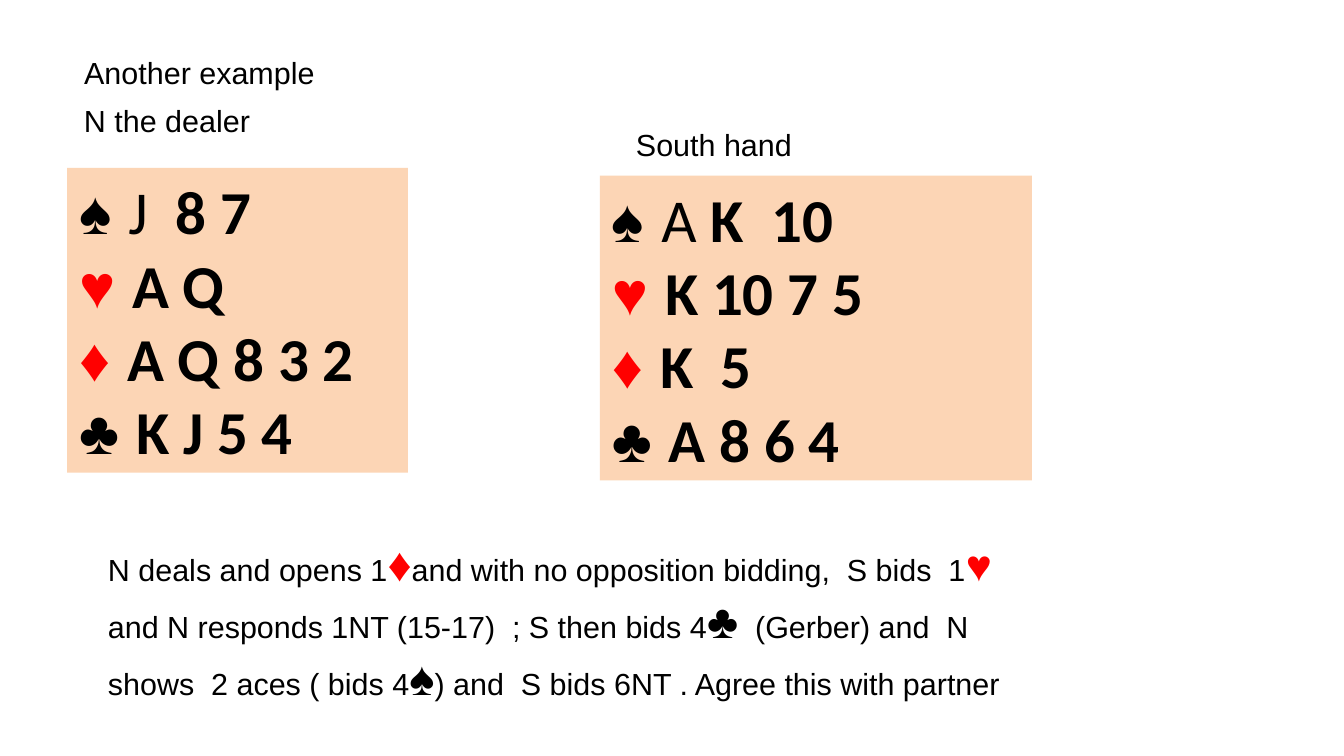
from dataclasses import dataclass

from pptx import Presentation
from pptx.dml.color import RGBColor
from pptx.enum.shapes import MSO_SHAPE
from pptx.enum.text import MSO_ANCHOR, MSO_AUTO_SIZE, PP_ALIGN
from pptx.util import Cm, Pt


@dataclass(frozen=True)
class Theme:
    black: RGBColor = RGBColor(0, 0, 0)
    red: RGBColor = RGBColor(255, 0, 0)
    panel: RGBColor = RGBColor(0xFC, 0xD5, 0xB5)
    text_font: str = "Arial"
    card_font: str = "Calibri"
    text_size: Pt = Pt(18)
    card_size: Pt = Pt(36)
    suit_size: Pt = Pt(28)
    heart_size: Pt = Pt(26)


THEME = Theme()
RED_SUITS = "♥♦"

NORTH_HAND = [
    [("♠ ", False), ("J", False), ("  8 7", True)],
    [("♥ ", True), ("A Q", True)],
    [("♦ ", True), ("A Q 8 3 2", True)],
    [("♣ ", True), ("K J 5 4", True)],
]
SOUTH_HAND = [
    [("♠ ", False), ("A", False), (" K  10", True)],
    [("♥ ", True), ("K 10 7 5", True)],
    [("♦ ", True), ("K  5", True)],
    [("♣ ", True), ("A 8 6 4", True)],
]
BIDDING = [
    "N deals and opens 1", "♦",
    "and with no opposition bidding,  S bids  1", "♥",
    " and N responds 1NT (15-17)  ; S then bids 4", "♣",
    "  (Gerber) and  N shows  2 aces ( bids 4", "♠",
    ") and  S bids 6NT . Agree this with partner",
]


def suit_color(suit):
    return THEME.red if suit in RED_SUITS else THEME.black


def format_text(paragraph):
    paragraph.alignment = PP_ALIGN.LEFT
    paragraph.font.name = THEME.text_font
    paragraph.font.size = THEME.text_size
    paragraph.font.color.rgb = THEME.black


def place_title(slide, text, left, top, width, height):
    title = slide.shapes.title
    title.left, title.top, title.width, title.height = left, top, width, height
    frame = title.text_frame
    frame.text = text
    frame.word_wrap = True
    frame.auto_size = MSO_AUTO_SIZE.NONE
    frame.vertical_anchor = MSO_ANCHOR.TOP
    format_text(frame.paragraphs[0])


def add_label(slide, text, left, top, width, height):
    frame = slide.shapes.add_textbox(left, top, width, height).text_frame
    frame.word_wrap = True
    frame.text = text
    format_text(frame.paragraphs[0])


def add_hand(slide, suits, left, top, width, height):
    panel = slide.shapes.add_shape(MSO_SHAPE.RECTANGLE, left, top, width, height)
    panel.shadow.inherit = False
    panel.fill.solid()
    panel.fill.fore_color.rgb = THEME.panel
    panel.line.fill.background()
    frame = panel.text_frame
    frame.word_wrap = True
    frame.vertical_anchor = MSO_ANCHOR.TOP
    for index, holding in enumerate(suits):
        line = frame.add_paragraph() if index else frame.paragraphs[0]
        line.alignment = PP_ALIGN.LEFT
        line.font.size = THEME.card_size
        for position, (text, bold) in enumerate(holding):
            cards = line.add_run()
            cards.text = text
            cards.font.bold = bold
            cards.font.name = THEME.card_font if position else THEME.text_font
            cards.font.color.rgb = THEME.black if position else suit_color(text[0])


def add_bidding(slide, pieces, left, top, width, height):
    frame = slide.shapes.add_textbox(left, top, width, height).text_frame
    frame.word_wrap = True
    account = frame.paragraphs[0]
    format_text(account)
    for index, text in enumerate(pieces):
        piece = account.add_run()
        piece.text = text
        if index % 2:
            piece.font.size = THEME.heart_size if text == "♥" else THEME.suit_size
            piece.font.bold = text != "♠"
            piece.font.color.rgb = suit_color(text)


def build_example(slide):
    place_title(slide, "Another example", Cm(1.5), Cm(1), Cm(24.5), Cm(0.97))
    add_hand(slide, NORTH_HAND, Cm(1.4), Cm(3.5), Cm(7.1), Cm(6.35))
    add_hand(slide, SOUTH_HAND, Cm(12.5), Cm(3.66), Cm(9), Cm(6.35))
    add_label(slide, "N the dealer", Cm(1.5), Cm(2), Cm(6.5), Cm(0.97))
    add_label(slide, "South hand", Cm(13), Cm(2.5), Cm(8), Cm(0.97))
    add_bidding(slide, BIDDING, Cm(2), Cm(11), Cm(19.5), Cm(4.75))


def main():
    deck = Presentation()
    deck.slide_width, deck.slide_height = Cm(28), Cm(15.75)
    build_example(deck.slides.add_slide(deck.slide_layouts[5]))
    deck.save("out.pptx")


if __name__ == "__main__":
    main()
